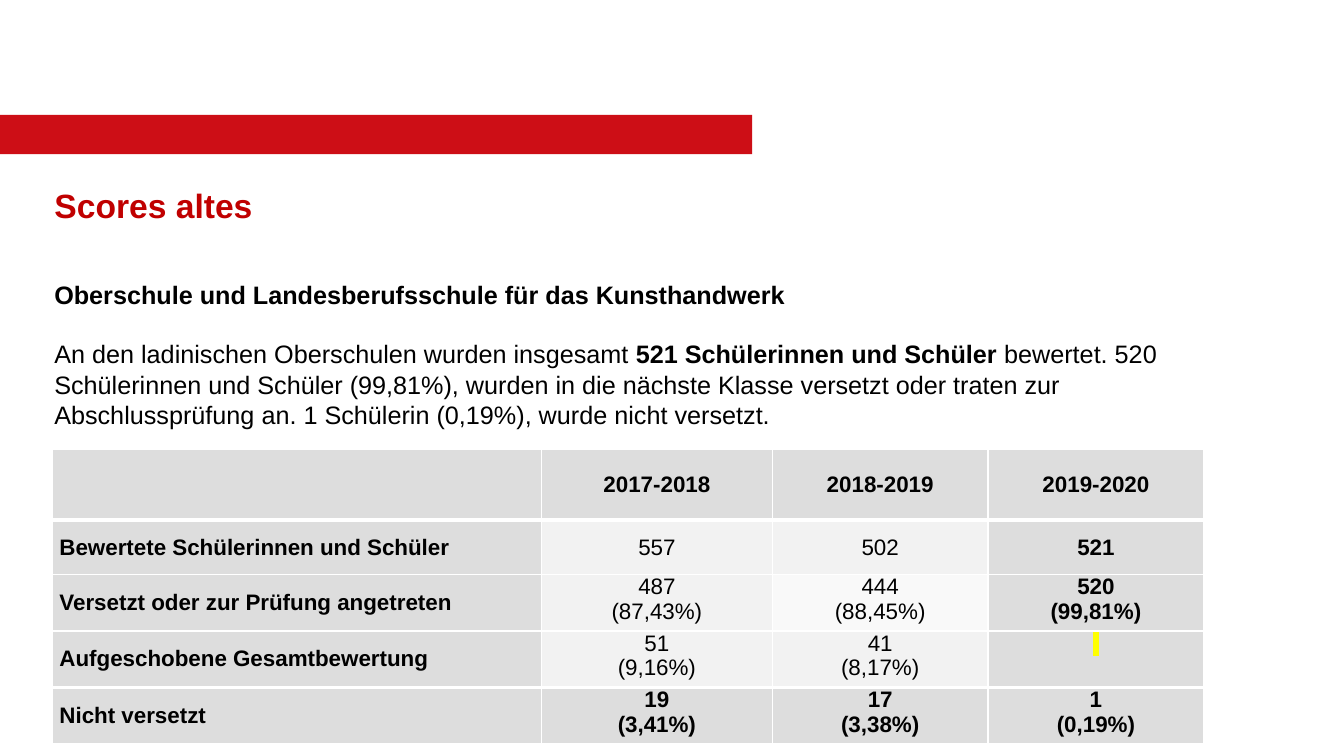
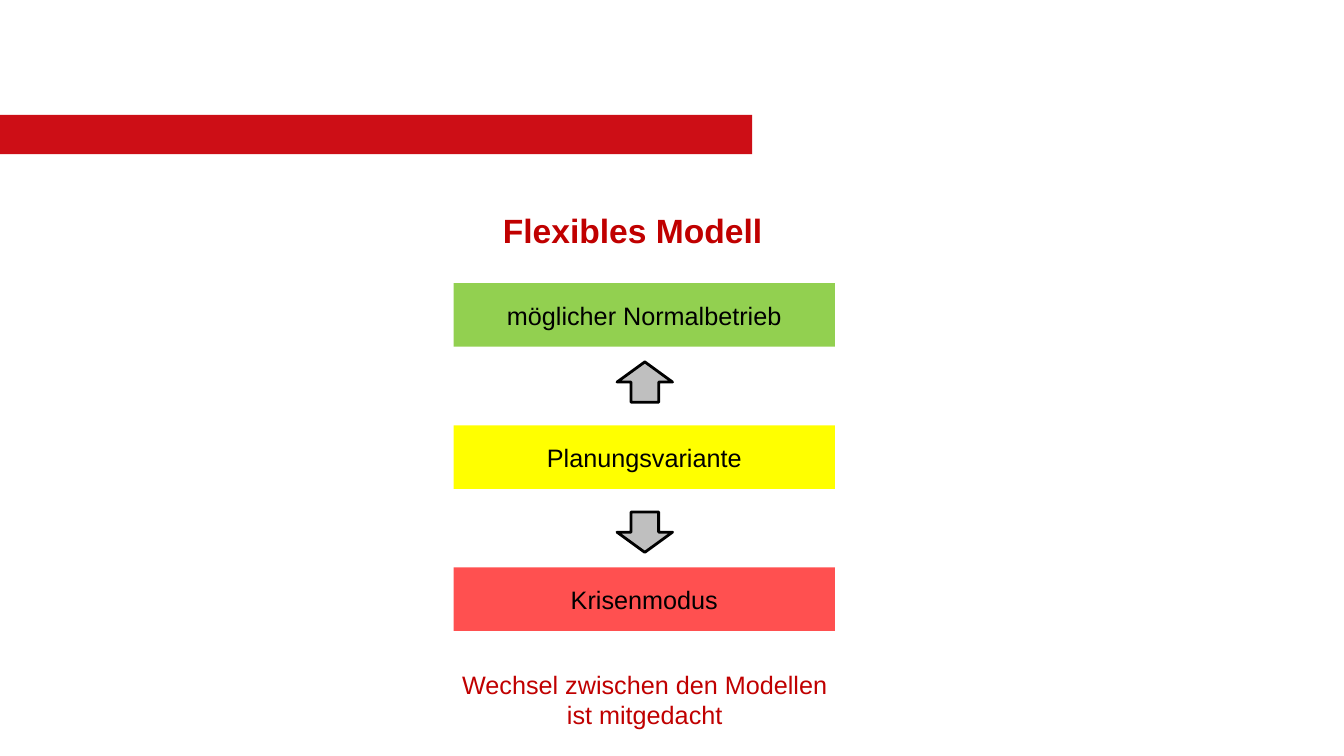
from lxml import etree
from pptx import Presentation
from pptx.dml.color import RGBColor
from pptx.enum.shapes import MSO_SHAPE
from pptx.enum.text import MSO_ANCHOR, MSO_AUTO_SIZE, PP_ALIGN
from pptx.oxml.ns import qn
from pptx.util import Pt

PX = 9144  # 100 px to the inch
LEFT, CENTER = PP_ALIGN.LEFT, PP_ALIGN.CENTER
TOP, MIDDLE = MSO_ANCHOR.TOP, MSO_ANCHOR.MIDDLE
RECT, DOWN_ARROW = MSO_SHAPE.RECTANGLE, MSO_SHAPE.DOWN_ARROW
NO_AUTOFIT = MSO_AUTO_SIZE.NONE
THIN, THICK = 1, 3


def px(*lengths):
    return [length * PX for length in lengths]


def color(hex_text):
    return RGBColor.from_string(hex_text)


class Deck:
    FONT = "Arial"
    BAND, ACCENT, BLACK, WHITE = "CD0E16", "C00000", "000000", "FFFFFF"
    TITLE_SIZE, BODY_SIZE, TABLE_SIZE = 24, 18, 16

    def __init__(self):
        self.prs = Presentation()
        self.prs.slide_width, self.prs.slide_height = px(1333, 750)
        self.slide = None

    def new_slide(self, title, box, align):
        """Start a slide with the red band and a formatted title."""
        self.slide = self.prs.slides.add_slide(self.prs.slide_layouts[5])
        self.shape(RECT, (0, 114, 746, 39), self.BAND)
        heading = self.slide.shapes.title
        heading.left, heading.top, heading.width, heading.height = px(*box)
        self.frame(heading.text_frame, TOP)
        self.fill_text(heading.text_frame, [[(title, True)]], self.TITLE_SIZE, self.ACCENT, align)

    def frame(self, frame, anchor):
        settings = {"word_wrap": True, "auto_size": NO_AUTOFIT, "vertical_anchor": anchor}
        for name, value in settings.items():
            setattr(frame, name, value)

    def fill_text(self, frame, paragraphs, size, ink, align, gap=0):
        """Fill a frame; each paragraph is a list of (text, bold) runs."""
        for index, runs in enumerate(paragraphs):
            paragraph = frame.add_paragraph() if index else frame.paragraphs[0]
            paragraph.alignment = align
            paragraph.space_before = Pt(gap if index else 0)
            for text, bold in runs:
                run = paragraph.add_run()
                run.text = text
                style = {"name": self.FONT, "size": Pt(size), "bold": bold}
                for name, value in style.items():
                    setattr(run.font, name, value)
                run.font.color.rgb = color(ink)

    def text(self, box, paragraphs, ink=BLACK, align=LEFT, anchor=TOP, gap=0):
        frame = self.slide.shapes.add_textbox(*px(*box)).text_frame
        self.frame(frame, anchor)
        self.fill_text(frame, paragraphs, self.BODY_SIZE, ink, align, gap)

    def shape(self, kind, box, fill, label=None, outline=None, rotation=0):
        shape = self.slide.shapes.add_shape(kind, *px(*box))
        shape.shadow.inherit = False
        shape.rotation = rotation
        shape.fill.solid()
        shape.fill.fore_color.rgb = color(fill)
        if outline:
            shape.line.color.rgb = color(outline)
            shape.line.width = Pt(2)
        else:
            shape.line.fill.background()
        if label:
            self.frame(shape.text_frame, MIDDLE)
            self.fill_text(shape.text_frame, [[(label, False)]], self.BODY_SIZE, self.BLACK,
                           CENTER)

    def borders(self, cell, top, bottom):
        """Draw white cell borders; they must precede the fill in the XML."""
        properties = cell._tc.get_or_add_tcPr()
        widths = {"a:lnL": THIN, "a:lnR": THIN, "a:lnT": top, "a:lnB": bottom}
        for index, (tag, width) in enumerate(widths.items()):
            line = etree.Element(qn(tag), w=str(Pt(width)))
            fill = etree.SubElement(line, qn("a:solidFill"))
            etree.SubElement(fill, qn("a:srgbClr"), val=self.WHITE)
            properties.insert(index, line)

    def highlight(self, cell, hex_text):
        run = cell.text_frame.paragraphs[0].runs[0]
        marker = etree.Element(qn("a:highlight"))
        etree.SubElement(marker, qn("a:srgbClr"), val=hex_text)
        run._r.get_or_add_rPr().find(qn("a:solidFill")).addnext(marker)

    def table(self, box, widths, heights, rows, fill_of, bold_of, thick_edges):
        """Build a table; thick_edges holds the row edges with a heavy line."""
        table = self.slide.shapes.add_table(len(rows), len(widths), *px(*box)).table
        table.first_row = table.horz_banding = False
        for column, width in zip(table.columns, px(*widths)):
            column.width = width
        for r, (values, height) in enumerate(zip(rows, px(*heights))):
            table.rows[r].height = height
            top, bottom = [THICK if edge in thick_edges else THIN for edge in (r, r + 1)]
            for c, value in enumerate(values):
                cell = table.cell(r, c)
                cell.margin_left = cell.margin_right = 7 * PX
                cell.margin_top = cell.margin_bottom = 0
                cell.vertical_anchor = MIDDLE if c == 0 or r < 2 else TOP
                cell.fill.solid()
                cell.fill.fore_color.rgb = color(fill_of(r, c))
                lines = [[(line, bold_of(r, c))] for line in value.split("\n")] if value else []
                self.fill_text(cell.text_frame, lines, self.TABLE_SIZE, self.BLACK,
                               CENTER if c else LEFT)
                self.borders(cell, top, bottom)
        return table


def scores_slide(deck):
    deck.new_slide("Scores altes", (44, 178, 1064, 84), LEFT)
    deck.text((44, 272, 1150, 170), [
        [("Oberschule und Landesberufsschule für das Kunsthandwerk", True)],
        [("An den ladinischen Oberschulen wurden insgesamt ", False),
         ("521 Schülerinnen und Schüler", True),
         (" bewertet. 520 Schülerinnen und Schüler (99,81%), wurden in die nächste Klasse "
          "versetzt oder traten zur Abschlussprüfung an. 1 Schülerin (0,19%), wurde nicht "
          "versetzt.", False)],
    ], gap=21)

    rows = [
        ("", "2017-2018", "2018-2019", "2019-2020"),
        ("Bewertete Schülerinnen und Schüler", "557", "502", "521"),
        ("Versetzt oder zur Prüfung angetreten",
         "487\n(87,43%)", "444\n(88,45%)", "520\n(99,81%)"),
        ("Aufgeschobene Gesamtbewertung", "51\n(9,16%)", "41\n(8,17%)", " "),
        ("Nicht versetzt", "19\n(3,41%)", "17\n(3,38%)", "1\n(0,19%)"),
    ]

    def emphasized(r, c):
        return r in (0, 4) or c in (0, 3)

    def fill_of(r, c):
        if emphasized(r, c):
            return "DDDDDD"
        return "F9F9F9" if (r, c) == (2, 2) else "F2F2F2"

    results = deck.table((52, 446, 1142, 292), (485, 229, 214, 214), (70, 54, 56, 56, 56),
                         rows, fill_of, emphasized, thick_edges=(1, 4))
    deck.highlight(results.cell(3, 3), "FFFF00")


def model_slide(deck):
    deck.new_slide("Flexibles Modell", (336, 203, 583, 70), CENTER)
    modes = [("möglicher Normalbetrieb", "92D050"), ("Planungsvariante", "FFFF00"),
             ("Krisenmodus", "FF5050")]
    for index, (mode, fill) in enumerate(modes):
        deck.shape(RECT, (450, 281 + 141 * index, 378, 63), fill, mode)
    for top, rotation in ((508, 0), (359, 180)):
        deck.shape(DOWN_ARROW, (612, top, 55, 40), "BFBFBF", outline=deck.BLACK,
                   rotation=rotation)
    deck.text((348, 644, 583, 100),
              [[("Wechsel zwischen den Modellen", False)], [("ist mitgedacht", False)]],
              deck.ACCENT, CENTER, MIDDLE)


def main():
    deck = Deck()
    scores_slide(deck)
    model_slide(deck)
    deck.prs.save("out.pptx")


if __name__ == "__main__":
    main()
